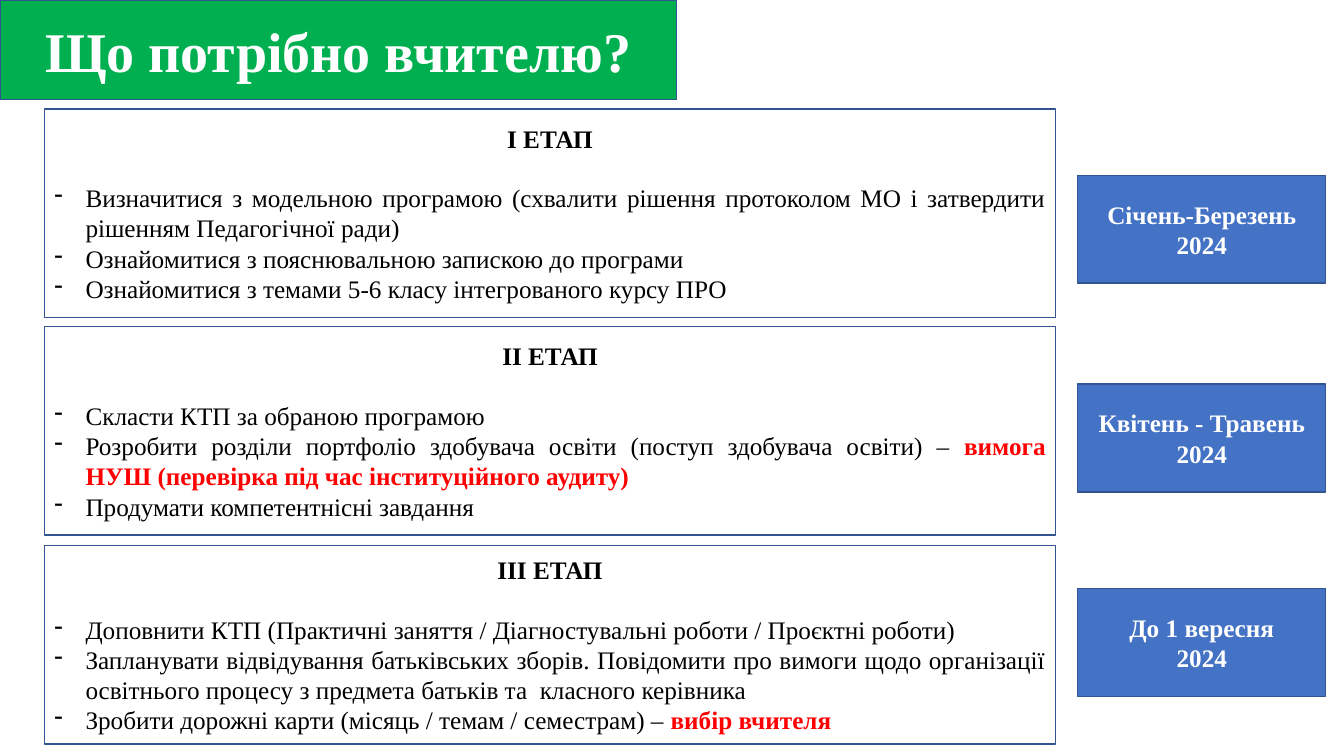
from lxml import etree
from pptx import Presentation
from pptx.dml.color import RGBColor
from pptx.enum.shapes import MSO_SHAPE
from pptx.enum.text import MSO_ANCHOR, PP_ALIGN
from pptx.oxml.ns import qn
from pptx.util import Pt

PX = 9144
RECT = MSO_SHAPE.RECTANGLE
MIDDLE = MSO_ANCHOR.MIDDLE
CENTER, JUSTIFY = PP_ALIGN.CENTER, PP_ALIGN.JUSTIFY
GREEN = RGBColor(0x00, 0xB0, 0x50)
BLUE = RGBColor(0x44, 0x72, 0xC4)
BORDER = RGBColor(0x32, 0x54, 0x91)
WHITE = RGBColor(0xFF, 0xFF, 0xFF)
BLACK = RGBColor(0x00, 0x00, 0x00)
RED = RGBColor(0xFF, 0x00, 0x00)
FONT = "Times New Roman"
INDENT = 31

TITLE = "Що потрібно вчителю?"
STAGES = [
    ((44, 108, 1003, 207), "І ЕТАП", [
        ("Визначитися з модельною програмою (схвалити рішення протоколом МО "
         "і затвердити рішенням Педагогічної ради)", ""),
        ("Ознайомитися з пояснювальною запискою до програми", ""),
        ("Ознайомитися з темами 5-6 класу інтегрованого курсу ПРО", ""),
    ]),
    ((44, 324, 1003, 207), "ІІ ЕТАП", [
        ("Скласти КТП за обраною програмою", ""),
        ("Розробити розділи портфоліо здобувача освіти (поступ здобувача освіти) – ",
         "вимога НУШ (перевірка під час інституційного аудиту)"),
        ("Продумати компетентнісні завдання", ""),
    ]),
    ((44, 541, 1003, 197), "ІІІ ЕТАП", [
        ("Доповнити КТП (Практичні заняття / Діагностувальні роботи / Проєктні роботи)", ""),
        ("Запланувати відвідування батьківських зборів. Повідомити про вимоги щодо "
         "організації освітнього процесу з предмета батьків та  класного керівника", ""),
        ("Зробити дорожні карти (місяць / темам / семестрам) – ", "вибір вчителя"),
    ]),
]
DEADLINES = [
    ((1069, 174, 246, 107), "Січень-Березень\n2024"),
    ((1069, 381, 246, 107), "Квітень - Травень\n2024"),
    ((1069, 584, 246, 107), "До 1 вересня\n2024"),
]


def add_box(slide, box, fill):
    """Add a bordered rectangle and return its text frame."""
    sp = slide.shapes.add_shape(RECT, *(v * PX for v in box))
    sp.shadow.inherit = False
    sp.fill.solid()
    sp.fill.fore_color.rgb = fill
    sp.line.color.rgb = BORDER
    sp.line.width = Pt(1)
    tf = sp.text_frame
    tf.word_wrap = True
    tf.vertical_anchor = MIDDLE
    return tf


def format_run(r, size, color, bold):
    """Set the font of one run."""
    r.font.name = FONT
    r.font.size = Pt(size)
    r.font.bold = bold
    r.font.color.rgb = color


def add_label(slide, box, text, fill, size):
    """Add a filled box with centred bold white text."""
    tf = add_box(slide, box, fill)
    tf.text = text
    for p in tf.paragraphs:
        p.alignment = CENTER
        for r in p.runs:
            format_run(r, size, WHITE, True)


def add_task(tf, text, accent):
    """Add a dash-bulleted task, with an optional red ending."""
    p = tf.add_paragraph()
    p.text = text
    p.alignment = JUSTIFY
    format_run(p.runs[0], 18, BLACK, False)
    if accent:
        r = p.add_run()
        r.text = accent
        format_run(r, 18, RED, True)
    pPr = p._p.get_or_add_pPr()
    pPr.set("marL", str(INDENT * PX))
    pPr.set("indent", str(-INDENT * PX))
    etree.SubElement(pPr, qn("a:buFontTx"))
    etree.SubElement(pPr, qn("a:buChar")).set("char", "-")


def add_stage(slide, box, heading, tasks):
    """Add a stage panel with its heading and tasks."""
    tf = add_box(slide, box, WHITE)
    tf.text = heading
    p = tf.paragraphs[0]
    p.alignment = CENTER
    p.space_after = Pt(21)
    format_run(p.runs[0], 18, BLACK, True)
    for text, accent in tasks:
        add_task(tf, text, accent)


def main():
    """Build the slide and save it."""
    prs = Presentation()
    prs.slide_width, prs.slide_height = 1333 * PX, 750 * PX
    slide = prs.slides.add_slide(prs.slide_layouts[6])
    add_label(slide, (0, 0, 671, 99), TITLE, GREEN, 40)
    for box, heading, tasks in STAGES:
        add_stage(slide, box, heading, tasks)
    for box, text in DEADLINES:
        add_label(slide, box, text, BLUE, 18)
    prs.save("out.pptx")


if __name__ == "__main__":
    main()
